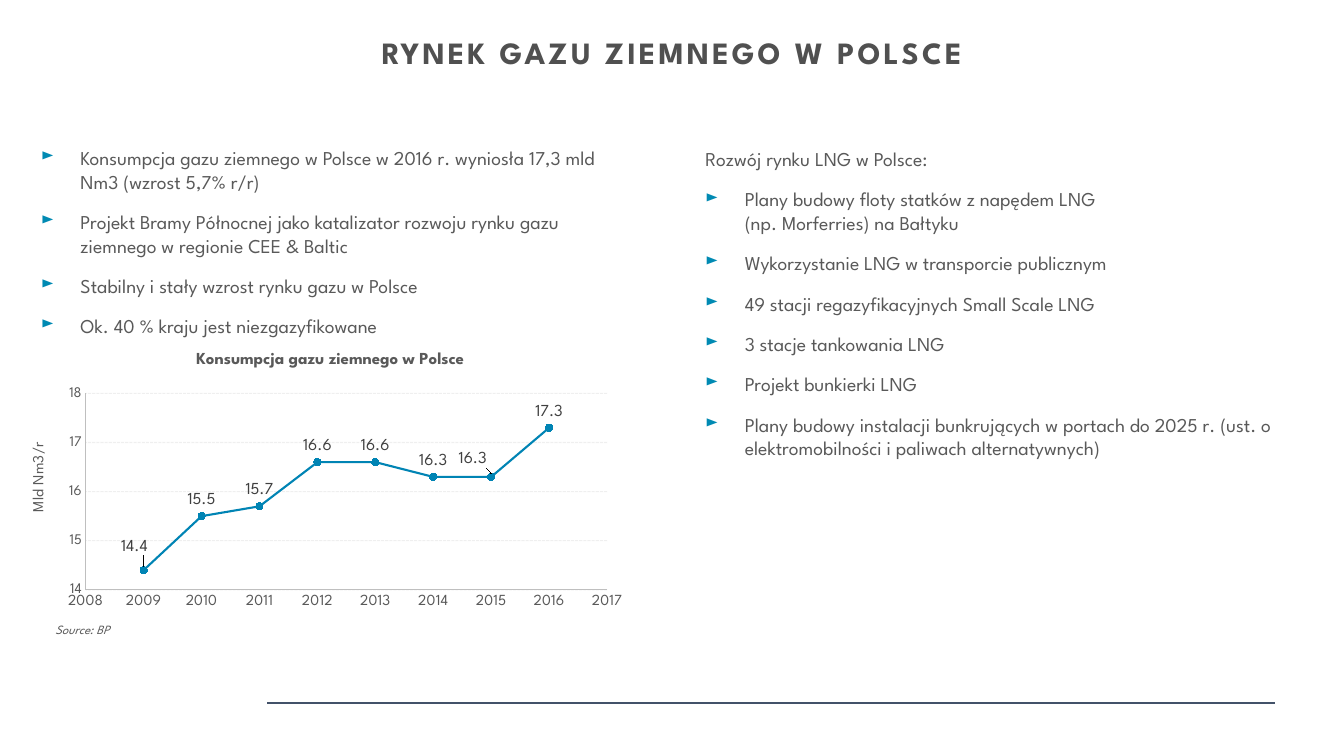
from dataclasses import dataclass

from lxml import etree
from pptx import Presentation
from pptx import util as u
from pptx.chart import data as chart_data
from pptx.dml import color
from pptx.enum import chart as ch
from pptx.enum import dml, shapes, text
from pptx.oxml import ns


@dataclass(frozen=True)
class Theme:
    font: str = "League Spartan"
    heading: str = "505050"
    body: str = "595959"
    label: str = "404040"
    bullet: str = "008AB3"
    series: str = "0084B4"
    axis: str = "BFBFBF"
    grid: str = "D9D9D9"
    rule: str = "435269"
    heading_size: float = 22.1
    body_size: float = 14
    label_size: float = 12
    year_size: float = 11
    value_size: float = 10.5
    source_size: float = 9


def rgb(code):
    return color.RGBColor.from_string(code)


def add_xml(parent, tag, **attributes):
    return etree.SubElement(parent, ns.qn(tag), attributes)


def place(element, index, **fractions):
    """Give a chart part a manual layout, as fractions of the chart."""
    for old in element.findall(ns.qn("c:layout")):
        element.remove(old)
    layout = etree.Element(ns.qn("c:layout"))
    element.insert(index, layout)
    manual = add_xml(layout, "c:manualLayout")
    for name, value in fractions.items():
        add_xml(manual, f"c:{name}", val=str(value))


class SlideBuilder:
    INDENT = 28.1

    def __init__(self, slide, theme):
        self.slide = slide
        self.theme = theme

    def style(self, font, size, code, bold=False, italic=False):
        font.name = self.theme.font
        font.size = u.Pt(size)
        font.bold = bold
        font.italic = italic
        font.color.rgb = rgb(code)

    def frame(self, left, top, width, height, anchor, wrap=True):
        box = self.slide.shapes.add_textbox(*map(u.Pt, (left, top, width, height)))
        box.text_frame.word_wrap = wrap
        box.text_frame.vertical_anchor = anchor
        return box.text_frame

    def run(self, paragraph, words, size, code, **look):
        run = paragraph.add_run()
        run.text = words
        self.style(run.font, size, code, **look)
        return run

    def heading(self, words, *area):
        paragraph = self.frame(*area, text.MSO_ANCHOR.MIDDLE).paragraphs[0]
        paragraph.alignment = text.PP_ALIGN.CENTER
        paragraph.line_spacing = 0.9
        run = self.run(paragraph, words, self.theme.heading_size, self.theme.heading, bold=True)
        run.font._element.set("spc", "220")

    def bullet(self, paragraph):
        properties = paragraph._p.get_or_add_pPr()
        properties.set("marL", str(u.Pt(self.INDENT)))
        properties.set("indent", str(-u.Pt(self.INDENT)))
        add_xml(add_xml(properties, "a:buClr"), "a:srgbClr", val=self.theme.bullet)
        add_xml(properties, "a:buSzPct", val="85000")
        add_xml(properties, "a:buChar", char="►")

    def points(self, items, *area, anchor, intro=None):
        frame = self.frame(*area, anchor)
        entries = ([intro] if intro else []) + items
        for number, entry in enumerate(entries):
            paragraph = frame.add_paragraph() if number else frame.paragraphs[0]
            paragraph.space_after = u.Pt(12)
            if entry != intro:
                self.bullet(paragraph)
            for row, words in enumerate(entry.split("\n")):
                if row:
                    paragraph.add_line_break()
                self.run(paragraph, words, self.theme.body_size, self.theme.body)

    def source(self, words, *area):
        frame = self.frame(*area, text.MSO_ANCHOR.TOP, wrap=False)
        self.run(frame.paragraphs[0], words, self.theme.source_size, self.theme.body, italic=True)

    def rule(self, left, right, y):
        line = self.slide.shapes.add_connector(
            shapes.MSO_CONNECTOR.STRAIGHT, u.Pt(left), u.Pt(y), u.Pt(right), u.Pt(y))
        line.line.color.rgb = rgb(self.theme.rule)
        line.line.width = u.Pt(1.5)
        add_xml(line._element.spPr, "a:effectLst")

    def axis(self, axis, low, high, size):
        axis.minimum_scale, axis.maximum_scale, axis.major_unit = low, high, 1
        axis.major_tick_mark = axis.minor_tick_mark = ch.XL_TICK_MARK.NONE
        axis.has_major_gridlines = False
        axis.tick_labels.number_format = "0"
        axis.tick_labels.number_format_is_linked = False
        self.style(axis.tick_labels.font, size, self.theme.body)
        axis.format.line.color.rgb = rgb(self.theme.axis)
        axis.format.line.width = u.Pt(0.75)

    def grid(self, axis):
        axis.has_major_gridlines = True
        line = axis.major_gridlines.format.line
        line.color.rgb = rgb(self.theme.grid)
        line.width = u.Pt(0.75)
        line.dash_style = dml.MSO_LINE.SQUARE_DOT
        fill = axis.major_gridlines._xAx.find(".//" + ns.qn("c:majorGridlines")).find(
            ".//" + ns.qn("a:srgbClr"))
        add_xml(fill, "a:alpha", val="40000")

    def trend(self, series, count, shifts):
        """Style the series; shifts moves single labels off their default place."""
        blue = rgb(self.theme.series)
        series.format.line.color.rgb = blue
        series.format.line.width = u.Pt(1.5)
        series.marker.style = ch.XL_MARKER_STYLE.CIRCLE
        series.marker.size = 5
        series.marker.format.fill.solid()
        series.marker.format.fill.fore_color.rgb = blue
        series.marker.format.line.color.rgb = blue
        for index in range(count):
            label = series.points[index].data_label
            self.style(label.font, self.theme.label_size, self.theme.label)
            label.position = ch.XL_LABEL_POSITION.ABOVE
        for element in series._element.iter(ns.qn("c:dLbl")):
            index = int(element.find(ns.qn("c:idx")).get("val"))
            if index in shifts:
                x, y = shifts[index]
                place(element, 1, x=x, y=y)

    def chart(self, caption, unit, consumption, shifts, *area):
        data = chart_data.XyChartData()
        yearly = data.add_series("Konsumpcja")
        for year, volume in consumption.items():
            yearly.add_data_point(year, volume)
        chart = self.slide.shapes.add_chart(
            ch.XL_CHART_TYPE.XY_SCATTER_LINES, *map(u.Pt, area), data).chart
        self.style(chart.font, 10, "000000")
        chart.has_legend = False
        chart.has_title = True
        self.run(chart.chart_title.text_frame.paragraphs[0], caption,
                 self.theme.label_size, self.theme.body, bold=True)
        years, volumes = chart.category_axis, chart.value_axis
        self.axis(years, 2008, 2017, self.theme.year_size)
        self.axis(volumes, 14, 18, self.theme.value_size)
        self.grid(volumes)
        self.run(volumes.axis_title.text_frame.paragraphs[0], unit,
                 self.theme.year_size, self.theme.body)
        plot = chart.plots[0]
        plot.vary_by_categories = False
        self.trend(plot.series[0], len(consumption), shifts)

        caption_part, unit_part = chart.element.iter(ns.qn("c:title"))
        unit_part.find(".//" + ns.qn("a:bodyPr")).set("rot", "-5400000")
        place(caption_part, 1, xMode="edge", yMode="edge", x=0.28, y=0.06)
        place(unit_part, 1, xMode="edge", yMode="edge", x=0.01, y=0.37)
        place(next(chart.element.iter(ns.qn("c:plotArea"))), 0, layoutTarget="inner",
              xMode="edge", yMode="edge", x=0.105, y=0.214, w=0.848, h=0.67)


def main():
    deck = Presentation()
    deck.slide_width, deck.slide_height = u.Pt(960), u.Pt(540)
    page = SlideBuilder(deck.slides.add_slide(deck.slide_layouts[6]), Theme())

    page.rule(190.8, 910.8, 502.4)
    page.heading("RYNEK GAZU ZIEMNEGO W POLSCE", 0, 20.9, 960, 36)
    page.points([
        "Konsumpcja gazu ziemnego w Polsce w 2016 r. wyniosła 17,3 mld Nm3 (wzrost 5,7% r/r)",
        "Projekt Bramy Północnej jako katalizator rozwoju rynku gazu ziemnego w regionie CEE & Baltic",
        "Stabilny i stały wzrost rynku gazu w Polsce",
        "Ok. 40 % kraju jest niezgazyfikowane",
    ], 22.3, 107.3, 432.7, 131, anchor=text.MSO_ANCHOR.MIDDLE)
    volumes = [14.4, 15.5, 15.7, 16.6, 16.6, 16.3, 16.3, 17.3]
    page.chart("Konsumpcja gazu ziemnego w Polsce", "Mld Nm3/r",
               dict(enumerate(volumes, start=2009)),
               {0: (-0.015, -0.024), 6: (-0.03, -0.005)}, 15.1, 236.2, 439.2, 209.5)
    page.source("Source: BP", 32.4, 440.6, 61.2, 18)
    page.points([
        "Plany budowy floty statków z napędem LNG\n(np. Morferries) na Bałtyku",
        "Wykorzystanie LNG w transporcie publicznym",
        "49 stacji regazyfikacyjnych Small Scale LNG",
        "3 stacje tankowania LNG",
        "Projekt bunkierki LNG",
        "Plany budowy instalacji bunkrujących w portach do 2025 r. "
        "(ust. o elektromobilności i paliwach alternatywnych)",
    ], 496.8, 101.5, 432.7, 270, anchor=text.MSO_ANCHOR.TOP,
        intro="Rozwój rynku LNG w Polsce:")
    deck.save("out.pptx")


if __name__ == "__main__":
    main()
